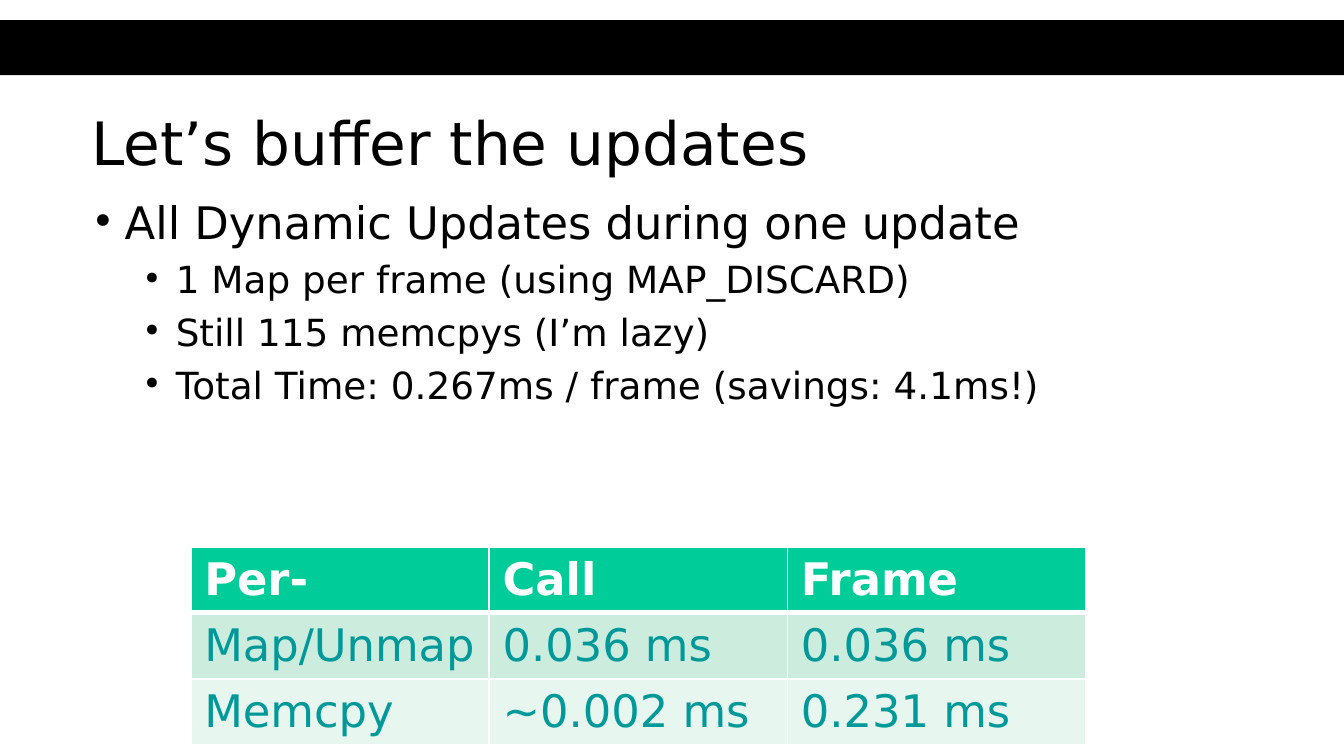
from lxml import etree
from pptx import Presentation
from pptx.dml.color import RGBColor
from pptx.enum.shapes import MSO_SHAPE
from pptx.enum.text import MSO_ANCHOR
from pptx.oxml.ns import qn
from pptx.util import Inches, Pt

# Content
FONT = "DejaVu Sans"
TITLE = "Let’s buffer the updates"
BULLETS = [  # level, text
    (0, "All Dynamic Updates during one update"),
    (1, "1 Map per frame (using MAP_DISCARD)"),
    (1, "Still 115 memcpys (I’m lazy)"),
    (1, "Total Time: 0.267ms / frame (savings: 4.1ms!)"),
]
LEVELS = [(24, 0.25), (20, 0.63)]  # text size, left indent
HANGING = 0.25
TIMINGS = [
    ("Per-", "Call", "Frame"),
    ("Map/Unmap", "0.036 ms", "0.036 ms "),
    ("Memcpy", "~0.002 ms", "0.231 ms"),
]
ROW_FILLS = ["00CC99", "CCECDE", "E7F6EF"]
COLUMN_WIDTH, ROW_HEIGHT = 2.22, 0.41


def color(value):
    return RGBColor.from_string(value)


def add_span(para, text, size, shade, bold=False):
    span = para.add_run()
    span.text = text
    font = span.font
    font.name, font.size, font.bold = FONT, Pt(size), bold
    font.color.rgb = color(shade)


def add_box(page, left, top, width, height, anchor):
    box = page.shapes.add_textbox(*map(Inches, (left, top, width, height)))
    frame = box.text_frame
    frame.word_wrap = True
    frame.vertical_anchor = anchor
    return frame


def add_bullet(para, indent):
    props = para._p.get_or_add_pPr()
    props.set("marL", str(Inches(indent)))
    props.set("indent", str(-Inches(HANGING)))
    shade = etree.SubElement(props, qn("a:buClr"))
    etree.SubElement(shade, qn("a:srgbClr"), val="000000")
    etree.SubElement(props, qn("a:buSzPct"), val="90000")
    etree.SubElement(props, qn("a:buFont"), typeface=FONT)
    etree.SubElement(props, qn("a:buChar"), char="•")


def add_borders(cell, top_width, bottom_width):
    props = cell._tc.get_or_add_tcPr()
    sides = [("a:lnL", 1), ("a:lnR", 1),
             ("a:lnT", top_width), ("a:lnB", bottom_width)]
    for position, (tag, width) in enumerate(sides):
        line = etree.Element(qn(tag), w=str(Pt(width)))
        fill = etree.SubElement(line, qn("a:solidFill"))
        etree.SubElement(fill, qn("a:srgbClr"), val="FFFFFF")
        props.insert(position, line)


# Widescreen page, 16 by 9
deck = Presentation()
deck.slide_width = Inches(10)
deck.slide_height = deck.slide_width * 9 // 16
page = deck.slides.add_slide(deck.slide_layouts[6])

# Black band
band = page.shapes.add_shape(
    MSO_SHAPE.RECTANGLE, 0, Inches(0.15), deck.slide_width, Inches(0.41))
band.shadow.inherit = False
band.fill.solid()
band.fill.fore_color.rgb = color("000000")
band.line.fill.background()

# Title
title = add_box(page, 0.58, 0.72, 8.83, 0.67, MSO_ANCHOR.MIDDLE)
add_span(title.paragraphs[0], TITLE, 32, "000000")

# Bulleted text
body = add_box(page, 0.58, 1.4, 8.83, 3.75, MSO_ANCHOR.TOP)
for index, (level, text) in enumerate(BULLETS):
    para = body.add_paragraph() if index else body.paragraphs[0]
    size, indent = LEVELS[level]
    para.level = level
    add_bullet(para, indent)
    if index:
        para.space_before = Pt(4.2)
    add_span(para, text, size, "000000")

# Timing table, with a thick line under the header
rows, columns = len(TIMINGS), len(TIMINGS[0])
table = page.shapes.add_table(
    rows, columns, Inches(1.42), Inches(4.07),
    Inches(columns * COLUMN_WIDTH), Inches(rows * ROW_HEIGHT)).table
for column in table.columns:
    column.width = Inches(COLUMN_WIDTH)
for row_index, (row, texts) in enumerate(zip(table.rows, TIMINGS)):
    row.height = Inches(ROW_HEIGHT)
    header = row_index == 0
    for cell, text in zip(row.cells, texts):
        cell.margin_bottom = Inches(0.04)
        cell.fill.solid()
        cell.fill.fore_color.rgb = color(ROW_FILLS[row_index])
        add_borders(cell, 3 if row_index == 1 else 1, 3 if header else 1)
        add_span(cell.text_frame.paragraphs[0], text, 24,
                 "FFFFFF" if header else "009999", header)

deck.save("out.pptx")
